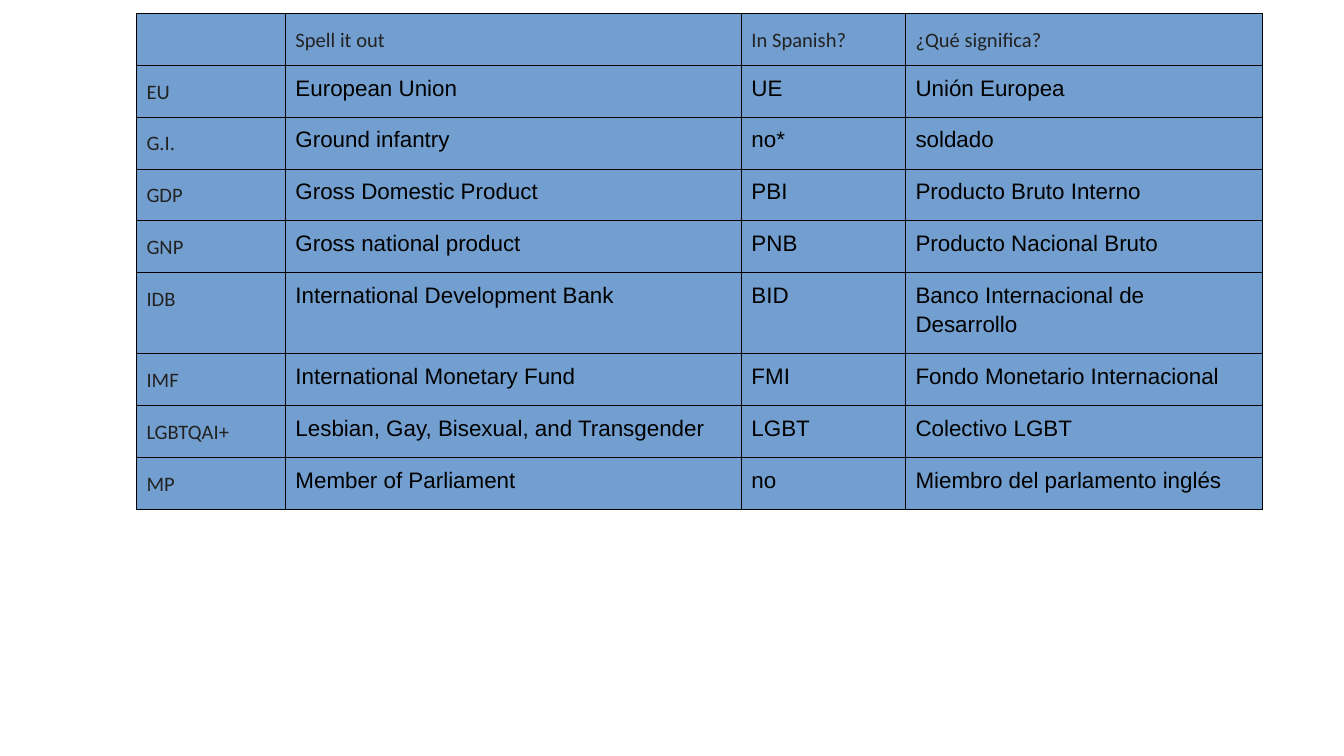
"""Build a slide with a table of English acronyms and their Spanish equivalents."""
from lxml import etree
from pptx import Presentation
from pptx.dml.color import RGBColor
from pptx.oxml.ns import qn
from pptx.util import Pt

CELL_BLUE = RGBColor(0x72, 0x9F, 0xCF)
DARK_GREY = RGBColor(0x22, 0x22, 0x22)
BLACK = RGBColor(0, 0, 0)

LABEL = dict(font="Calibri", size=11, color=DARK_GREY, spacing=1.29)
ENTRY = dict(font="Arial", size=12, color=BLACK, spacing=1.15)

COLUMN_WIDTHS = [79.8, 244.3, 87.9, 191.3]
ROW_HEIGHT = 27.8
TALL_ROW_HEIGHT = 43.4
BORDER_WIDTH = 0.45

ACRONYMS = [
    ("", "Spell it out", "In Spanish?", "¿Qué significa?"),
    ("EU", "European Union", "UE", "Unión Europea"),
    ("G.I.", "Ground infantry", "no*", "soldado"),
    ("GDP", "Gross Domestic Product", "PBI", "Producto Bruto Interno"),
    ("GNP", "Gross national product", "PNB", "Producto Nacional Bruto"),
    ("IDB", "International Development Bank", "BID", "Banco Internacional de Desarrollo"),
    ("IMF", "International Monetary Fund", "FMI", "Fondo Monetario Internacional"),
    ("LGBTQAI+", "Lesbian, Gay, Bisexual, and Transgender", "LGBT", "Colectivo LGBT"),
    ("MP", "Member of Parliament", "no", "Miembro del parlamento inglés"),
]


def write_text(cell, text, *, font, size, color, spacing):
    paragraph = cell.text_frame.paragraphs[0]
    paragraph.line_spacing = spacing
    if not text:
        etree.SubElement(paragraph._p, qn("a:endParaRPr"), sz=str(size * 100))
        return
    run = paragraph.add_run()
    run.text = text
    run.font.name = font
    run.font.size = Pt(size)
    run.font.color.rgb = color


def add_borders(cell):
    properties = cell._tc.get_or_add_tcPr()
    for side in ("a:lnL", "a:lnR", "a:lnT", "a:lnB"):
        border = etree.SubElement(properties, qn(side), w=str(Pt(BORDER_WIDTH)))
        fill = etree.SubElement(border, qn("a:solidFill"))
        etree.SubElement(fill, qn("a:srgbClr"), val=str(BLACK))


def format_cell(cell):
    cell.margin_left = cell.margin_right = Pt(5.4)
    cell.margin_top = cell.margin_bottom = Pt(3.6)
    add_borders(cell)
    cell.fill.solid()
    cell.fill.fore_color.rgb = CELL_BLUE


def add_acronym_table(slide):
    heights = [TALL_ROW_HEIGHT if row[0] == "IDB" else ROW_HEIGHT for row in ACRONYMS]
    table = slide.shapes.add_table(
        len(ACRONYMS), len(COLUMN_WIDTHS), Pt(73.1), Pt(7.2),
        Pt(sum(COLUMN_WIDTHS)), Pt(sum(heights))).table
    table.first_row = table.horz_banding = False
    for column, width in zip(table.columns, COLUMN_WIDTHS):
        column.width = Pt(width)
    for row, height in zip(table.rows, heights):
        row.height = Pt(height)
    for r, entries in enumerate(ACRONYMS):
        for c, text in enumerate(entries):
            cell = table.cell(r, c)
            format_cell(cell)
            write_text(cell, text, **(LABEL if r == 0 or c == 0 else ENTRY))


def main():
    presentation = Presentation()
    presentation.slide_width = Pt(720)
    presentation.slide_height = Pt(405)
    slide = presentation.slides.add_slide(presentation.slide_layouts[6])
    add_acronym_table(slide)
    presentation.save("out.pptx")


if __name__ == "__main__":
    main()
